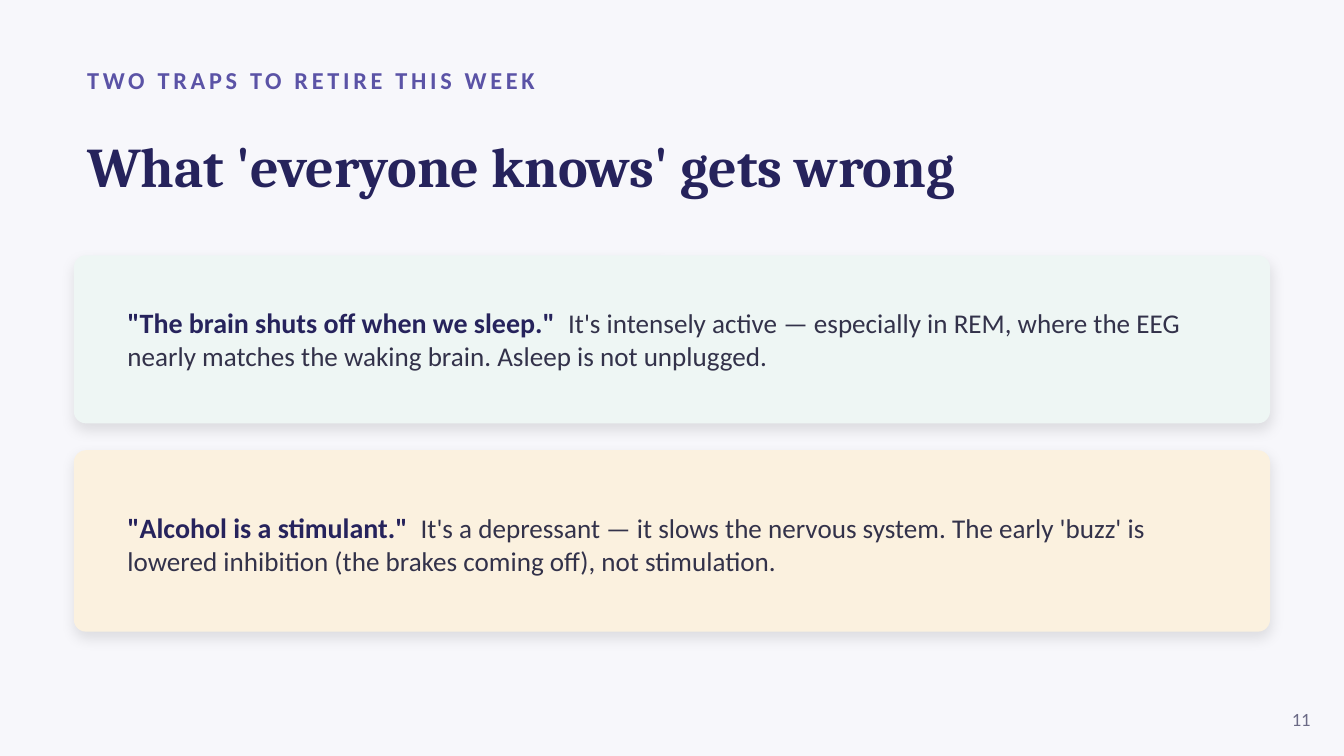
import pptx
import pptx.util
import pptx.dml.color
import pptx.enum.shapes
import pptx.enum.text
import pptx.oxml

theme = {
    "back": "F7F7FB", "navy": "26235C", "violet": "5B53A6", "ink": "33324A",
    "muted": "6B6A86", "mint": "EEF6F4", "cream": "FBF1DF",
    "sans": "Calibri", "serif": "Cambria",
    "title": 30, "lead": 15, "body": 14.5, "label": 13, "foot": 10,
}
shadow = """<a:effectLst xmlns:a="http://schemas.openxmlformats.org/drawingml/2006/main">
<a:outerShdw blurRad="88900" dist="38100" dir="5400000" algn="bl" rotWithShape="0">
<a:srgbClr val="000000"><a:alpha val="10000"/></a:srgbClr></a:outerShdw></a:effectLst>"""

deck = pptx.Presentation()
deck.slide_width = pptx.util.Inches(10)
deck.slide_height = pptx.util.Inches(5.625)
cell = deck.slide_width / 100
slide = deck.slides.add_slide(deck.slide_layouts[6])
rgb = pptx.dml.color.RGBColor.from_string
slide.background.fill.solid()
slide.background.fill.fore_color.rgb = rgb(theme["back"])


def grid(*cells):
    return [round(n * cell) for n in cells]


def write(text, at=None, para=None, size="body", color="ink", bold=False,
          face="sans", space=0, align="LEFT"):
    if para is None:
        frame = slide.shapes.add_textbox(*grid(*at)).text_frame
        frame.word_wrap = True
        frame.vertical_anchor = pptx.enum.text.MSO_ANCHOR.MIDDLE
        para = frame.paragraphs[0]
        para.alignment = pptx.enum.text.PP_ALIGN[align]
    run = para.add_run()
    run.text = text
    run.font.name = theme[face]
    run.font.size = pptx.util.Pt(theme[size])
    run.font.bold = bold
    run.font.color.rgb = rgb(theme[color])
    if space:
        run.font._element.set("spc", str(round(space * 100)))
    return para


left, width, inset, gap = 5.5, 89, 3, 2
write("TWO TRAPS TO RETIRE THIS WEEK", at=(left, 4.2, 90, 3.5),
      size="label", color="violet", bold=True, space=2)
write("What 'everyone knows' gets wrong", at=(left, 7.8, width, 9),
      size="title", color="navy", bold=True, face="serif")

cards = [
    ("mint", 12.5, 2.2, 8, '"The brain shuts off when we sleep."',
     "It's intensely active — especially in REM, where the EEG nearly matches "
     "the waking brain. Asleep is not unplugged."),
    ("cream", 13.5, 2.7, 8.5, '"Alcohol is a stimulant."',
     "It's a depressant — it slows the nervous system. The early 'buzz' is "
     "lowered inhibition (the brakes coming off), not stimulation."),
]
top = 19
for tint, tall, drop, high, myth, fact in cards:
    card = slide.shapes.add_shape(pptx.enum.shapes.MSO_SHAPE.ROUNDED_RECTANGLE,
                                  *grid(left, top, width, tall))
    card.adjustments[0] = 0.9 / tall
    card.fill.solid()
    card.fill.fore_color.rgb = rgb(theme[tint])
    card.line.fill.background()
    card._element.spPr.append(pptx.oxml.parse_xml(shadow))
    para = write(myth, at=(left + inset, top + drop, width - 2 * inset, high),
                 size="lead", color="navy", bold=True)
    write(" ", para=para, size="lead", color="navy", bold=True, space=3.4)
    write(fact, para=para)
    top += tall + gap

write("11", at=(93.5, 52, 5, 3), size="foot", color="muted", align="RIGHT")
deck.save("out.pptx")
